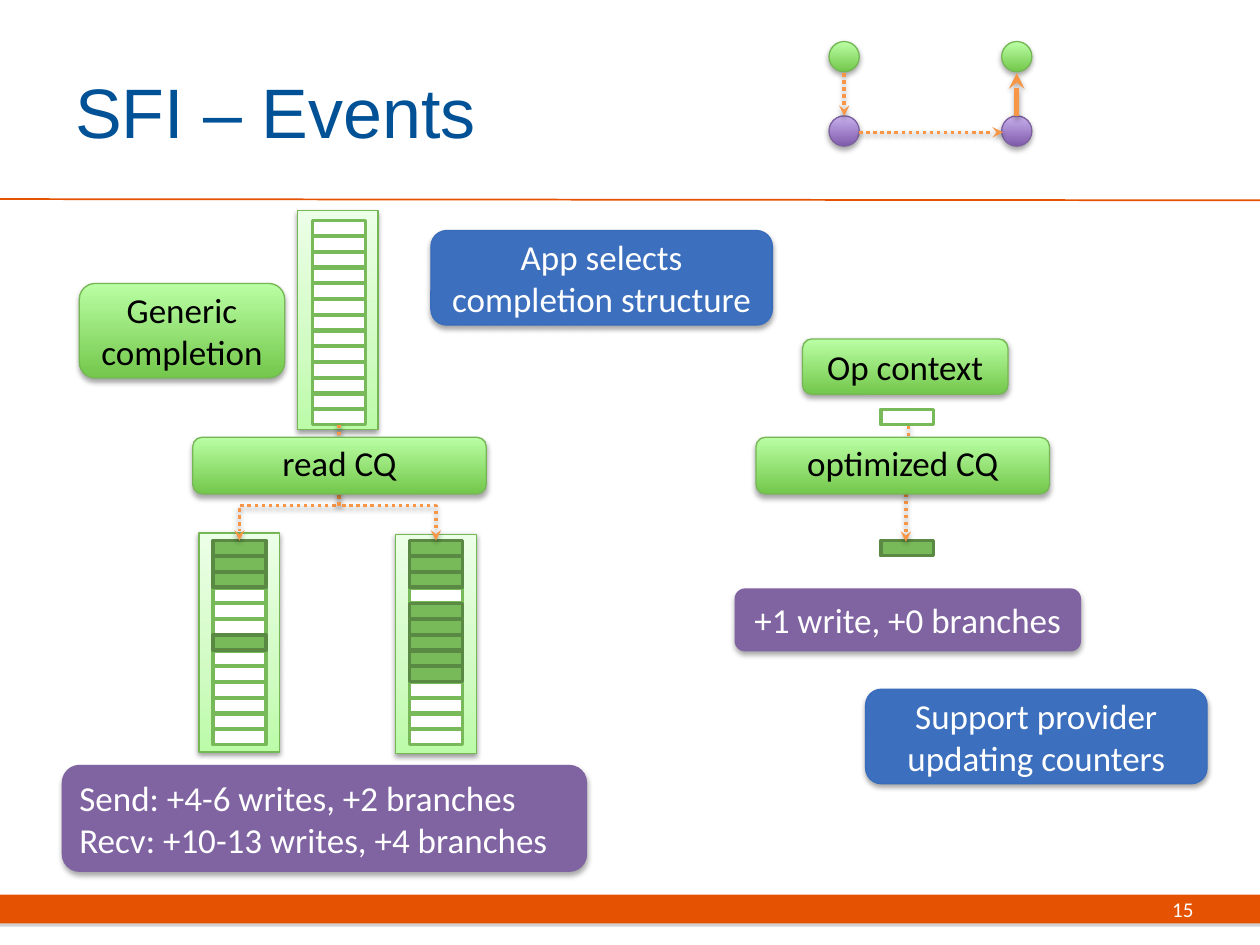
from copy import deepcopy
from typing import NamedTuple

from pptx import Presentation
from pptx.dml.color import RGBColor
from pptx.enum.dml import MSO_LINE_DASH_STYLE as Dash
from pptx.enum.shapes import MSO_CONNECTOR as Conn, MSO_SHAPE as Shape
from pptx.enum.text import MSO_ANCHOR as Anchor, PP_ALIGN as Align
from pptx.oxml.ns import qn
from pptx.util import Inches, Pt
from lxml.etree import SubElement

COLORS = {
    "bar": "E55302", "title": "005195", "white": "FFFFFF", "black": "000000",
    "arrow": "F79646", "grey": "808080", "green_edge": "75B755",
    "purple_edge": "7D60A0", "purple": "8064A2", "blue": "3C6FBD",
    "blue_edge": "386CBC", "cell": "78B959", "cell_edge": "598942",
}
GRADIENTS = {
    "green": [(0, "73C74B"), (1, "BAFFA4")],
    "violet": [(0, "7F5BAB"), (1, "C8B0ED")],
    "pale": [(0, "BCFBA8"), (0.35, "D0FBC2"), (1, "ECFFE7")],
}
CELL_W, CELL_H, PITCH, CELL_COUNT = 0.42, 0.12, 0.125, 13


class Shadow(NamedTuple):
    color: str
    alpha: int
    blur: float
    dist: float


class Box(NamedTuple):
    text: str
    x: float
    y: float
    w: float
    h: float
    fill: str
    edge: str | None
    color: str = "white"
    align: Align = Align.CENTER
    spacing: float = 1.0


class Queue(NamedTuple):
    x: float
    y: float
    cell_x: float
    cell_y: float
    filled: set[int]


class Arrow(NamedTuple):
    x1: float
    y1: float
    x2: float
    y2: float
    width: float = 2
    dotted: bool = True


STRONG = Shadow("black", 35, 3.1, 1.8)
SOFT = Shadow("black", 38, 3.1, 1.6)
FLAT = Shadow("grey", 35, 0, 1.8)

QUEUES = [
    Queue(3.14, 4.24, 3.25, 4.29, {0, 1, 2, 4, 5, 6, 7, 8}),
    Queue(1.58, 4.23, 1.69, 4.29, {0, 1, 2, 6}),
    Queue(2.36, 1.67, 2.48, 1.75, set()),
]
NODES = [(x, y, fill, edge) for x in (6.58, 7.95)
         for y, fill, edge in ((0.33, "green", "green_edge"), (0.92, "violet", "purple_edge"))]
ARROWS = [
    Arrow(8.07, 0.92, 8.07, 0.58, 3, False),
    Arrow(6.7, 0.58, 6.7, 0.92),
    Arrow(6.82, 1.05, 7.96, 1.05),
]
ELBOWS = [
    (Arrow(2.69, 3.37, 1.9, 4.29), 0.7),
    (Arrow(2.69, 3.37, 3.46, 4.29), 0.7),
    (Arrow(7.21, 3.38, 7.19, 4.3), 0.5),
]
BOXES = [
    Box("read CQ", 1.53, 3.47, 2.33, 0.45, "green", "green_edge", "black", spacing=0.9),
    Box("optimized CQ", 6, 3.47, 2.33, 0.45, "green", "green_edge", "black", spacing=0.9),
    Box("Generic completion", 0.63, 2.25, 1.63, 0.75, "green", "green_edge", "black"),
    Box("Op context", 6.37, 2.69, 1.63, 0.44, "green", "green_edge", "black"),
    Box("Send: +4-6 writes, +2 branches\nRecv: +10-13 writes, +4 branches",
        0.49, 6.07, 4.17, 0.85, "purple", None, align=Align.LEFT),
    Box("+1 write, +0 branches", 5.83, 4.67, 2.75, 0.5, "purple", None),
    Box("App selects completion structure", 3.42, 1.83, 2.71, 0.75, "blue", "blue_edge"),
    Box("Support provider updating counters", 6.87, 5.47, 2.71, 0.75, "blue", "blue_edge"),
]


def rgb(name: str) -> RGBColor:
    return RGBColor.from_string(COLORS[name])


def add_shadow(s, shadow: Shadow) -> None:
    sp_pr = s._element.spPr
    effects = sp_pr.find(qn("a:effectLst"))
    if effects is None:
        effects = SubElement(sp_pr, qn("a:effectLst"))
    outer = SubElement(effects, qn("a:outerShdw"), blurRad=str(Pt(shadow.blur)),
                       dist=str(Pt(shadow.dist)), dir="5400000", rotWithShape="0")
    color = SubElement(outer, qn("a:srgbClr"), val=COLORS[shadow.color])
    SubElement(color, qn("a:alpha"), val=str(shadow.alpha * 1000))


def set_gradient(s, stops: list[tuple[float, str]]) -> None:
    s.fill.gradient()
    s.fill.gradient_angle = 90
    gs_list = s._element.spPr.find(qn("a:gradFill")).find(qn("a:gsLst"))
    for _ in stops[2:]:
        gs_list.append(deepcopy(gs_list[0]))
    for stop, (position, color) in zip(s.fill.gradient_stops, stops):
        stop.position = position
        stop.color.rgb = RGBColor.from_string(color)


def add_block(slide, kind: Shape, x: float, y: float, w: float, h: float, fill: str,
              edge: str | None, width: float = 0.75, shadow: Shadow | None = None):
    s = slide.shapes.add_shape(kind, Inches(x), Inches(y), Inches(w), Inches(h))
    s.shadow.inherit = False
    if fill in GRADIENTS:
        set_gradient(s, GRADIENTS[fill])
    else:
        s.fill.solid()
        s.fill.fore_color.rgb = rgb(fill)
    if edge:
        s.line.color.rgb = rgb(edge)
        s.line.width = Pt(width)
    else:
        s.line.fill.background()
    if shadow:
        add_shadow(s, shadow)
    return s


def set_text(s, text: str, size: float, color: str, font: str = "Calibri",
             align: Align = Align.LEFT, spacing: float = 1.0) -> None:
    tf = s.text_frame
    tf.word_wrap = True
    tf.vertical_anchor = Anchor.MIDDLE
    tf.text = text
    for p in tf.paragraphs:
        p.alignment = align
        p.line_spacing = spacing
        for r in p.runs:
            r.font.size, r.font.name = Pt(size), font
            r.font.color.rgb = rgb(color)


def add_label(slide, x: float, y: float, w: float, h: float, *args, **kwargs) -> None:
    set_text(slide.shapes.add_textbox(Inches(x), Inches(y), Inches(w), Inches(h)), *args, **kwargs)


def add_cell(slide, x: float, y: float, filled: bool) -> None:
    fill, edge = ("cell", "cell_edge") if filled else ("white", "cell")
    add_block(slide, Shape.RECTANGLE, x, y, CELL_W, CELL_H, fill, edge, 2)


def add_queue_cells(slide, queue: Queue) -> None:
    for i in sorted(range(CELL_COUNT), key=lambda n: n in queue.filled):
        add_cell(slide, queue.cell_x, queue.cell_y + i * PITCH, i in queue.filled)


def add_line(slide, arrow: Arrow, kind: Conn = Conn.STRAIGHT, color: str = "arrow"):
    c = slide.shapes.add_connector(kind, Inches(arrow.x1), Inches(arrow.y1),
                                   Inches(arrow.x2), Inches(arrow.y2))
    c.line.color.rgb = rgb(color)
    c.line.width = Pt(arrow.width)
    SubElement(c._element.spPr, qn("a:effectLst"))
    return c


def add_arrow(slide, arrow: Arrow, kind: Conn = Conn.STRAIGHT):
    c = add_line(slide, arrow, kind)
    if arrow.dotted:
        c.line.dash_style = Dash.ROUND_DOT
    SubElement(c.line._get_or_add_ln(), qn("a:tailEnd"), type="stealth")
    add_shadow(c, SOFT if arrow.dotted else STRONG)
    return c


def add_elbow(slide, arrow: Arrow, bend: float) -> None:
    run, drop = abs(arrow.x2 - arrow.x1), arrow.y2 - arrow.y1
    left = (arrow.x1 + arrow.x2 - drop) / 2
    top = (arrow.y1 + arrow.y2 - run) / 2
    c = add_arrow(slide, Arrow(left, top, left + drop, top + run), Conn.ELBOW)
    xfrm = c._element.spPr.find(qn("a:xfrm"))
    rightward = arrow.x2 > arrow.x1
    xfrm.set("rot", str((270 if rightward else 90) * 60000))
    if rightward:
        xfrm.set("flipH", "1")
    guides = c._element.spPr.find(qn("a:prstGeom")).get_or_add_avLst()
    SubElement(guides, qn("a:gd"), name="adj1", fmla=f"val {round(bend * 100000)}")


def main() -> None:
    prs = Presentation()
    prs.slide_width, prs.slide_height = Inches(10), Inches(7.5)
    slide = prs.slides.add_slide(prs.slide_layouts[6])
    add_block(slide, Shape.RECTANGLE, 0, 7.1, 10, 0.23, "bar", None, shadow=FLAT)
    add_line(slide, Arrow(0, 1.58, 10, 1.59, 1), color="bar")
    for q in QUEUES:
        add_block(slide, Shape.RECTANGLE, q.x, q.y, 0.64, 1.74, "pale", "green_edge", shadow=SOFT)
    add_label(slide, 0.5, 0.25, 8.17, 1.25, "SFI – Events", 40, "title", "Arial")
    add_label(slide, 8.38, 7.1, 1.19, 0.23, "15", 12, "white", align=Align.RIGHT)
    for x, y, fill, edge in NODES:
        add_block(slide, Shape.FLOWCHART_CONNECTOR, x, y, 0.24, 0.24, fill, edge, shadow=STRONG)
    for arrow in ARROWS:
        add_arrow(slide, arrow)
    for q in QUEUES:
        add_queue_cells(slide, q)
    add_cell(slide, 6.99, 3.25, False)
    add_cell(slide, 6.99, 4.29, True)
    for arrow, bend in ELBOWS:
        add_elbow(slide, arrow, bend)
    for b in BOXES:
        s = add_block(slide, Shape.ROUNDED_RECTANGLE, b.x, b.y, b.w, b.h, b.fill, b.edge, shadow=STRONG)
        set_text(s, b.text, 20, b.color, align=b.align, spacing=b.spacing)
    prs.save("out.pptx")


if __name__ == "__main__":
    main()
